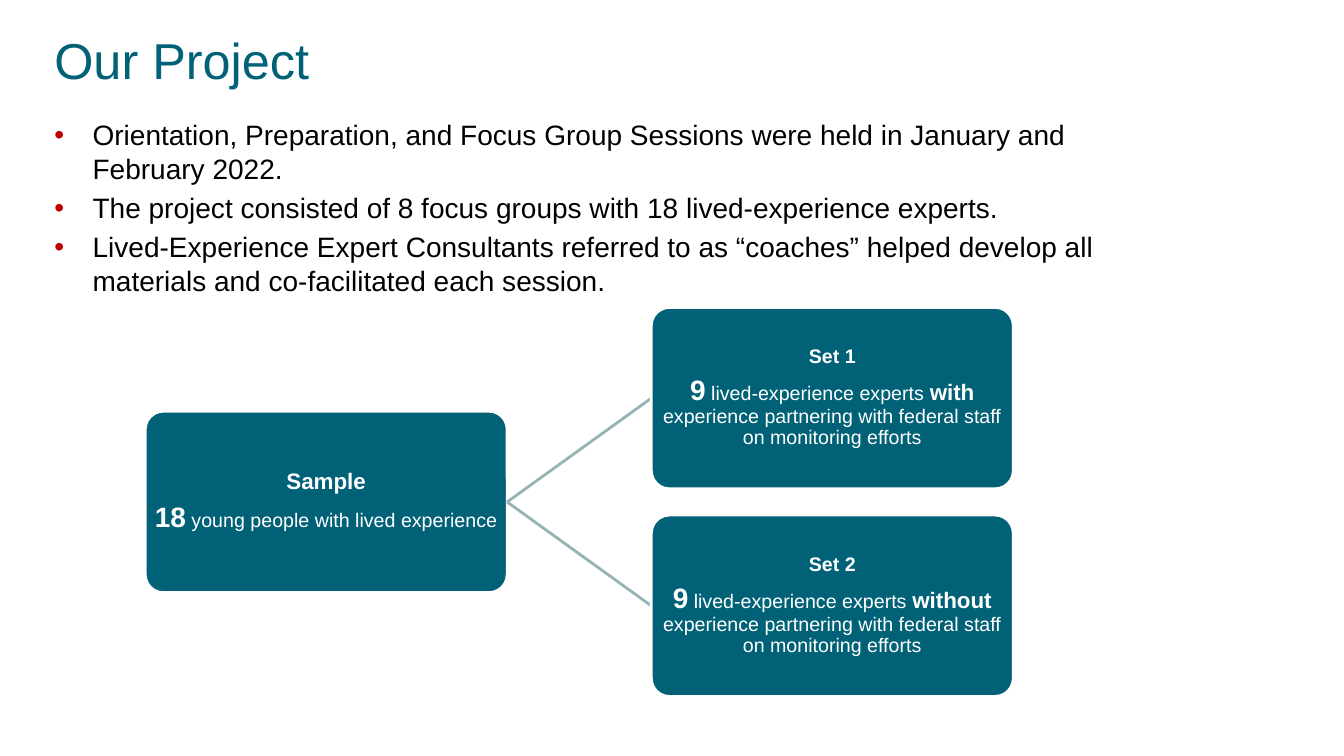
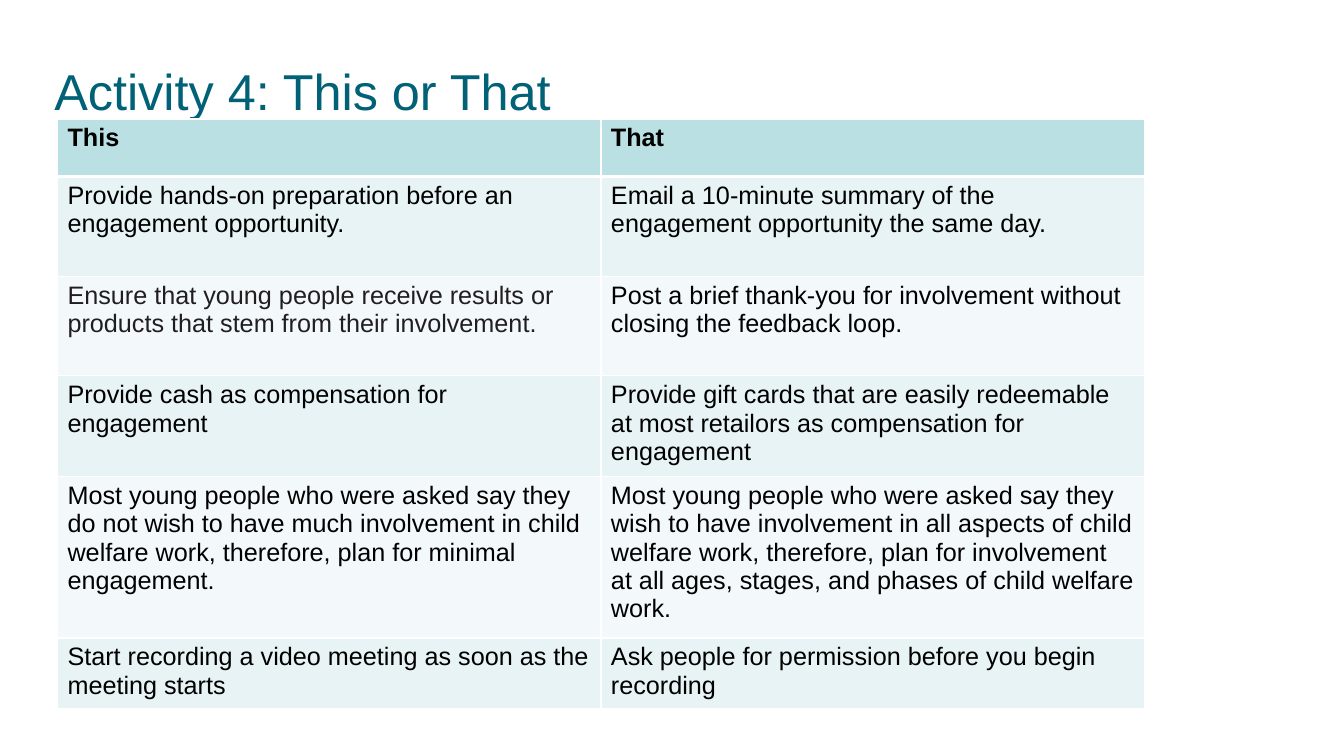
from dataclasses import dataclass

from lxml.etree import SubElement
from pptx import Presentation
from pptx.dml.color import RGBColor
from pptx.enum.shapes import MSO_CONNECTOR, MSO_SHAPE
from pptx.enum.text import MSO_ANCHOR, PP_ALIGN
from pptx.oxml.ns import qn
from pptx.util import Inches, Pt


@dataclass(frozen=True)
class Theme:
    font: str = "Arial"
    teal: str = "006177"
    black: str = "000000"
    charcoal: str = "211E1F"
    white: str = "FFFFFF"
    bullet: str = "C00000"
    branch: str = "96B3B6"
    header: str = "BBE0E3"
    bands: tuple = ("E7F3F4", "F3F9FA")
    title_size: int = 36
    body_size: int = 20
    table_size: int = 18
    strong_size: int = 16
    small_size: int = 14


THEME = Theme()
LEFT, CONTENT_WIDTH = 0.44, 10.78

PROJECT_TITLE = "Our Project"
PROJECT_POINTS = [
    "Orientation, Preparation, and Focus Group Sessions were held in January and February 2022.",
    "The project consisted of 8 focus groups with 18 lived-experience experts.",
    "Lived-Experience Expert Consultants referred to as “coaches” helped develop all "
    "materials and co-facilitated each session.",
]

# Each run is (text, size, bold)
SAMPLE = [
    [("Sample", THEME.strong_size, True)],
    [("18", THEME.body_size, True),
     (" young people with lived experience", THEME.small_size, False)],
]


def set_text(name, partnering):
    return [
        [(name, THEME.small_size, True)],
        [("9", THEME.body_size, True),
         (" lived-experience experts ", THEME.small_size, False),
         (partnering, THEME.strong_size, True),
         (" experience partnering with federal staff on monitoring efforts",
          THEME.small_size, False)],
    ]


SETS = [set_text("Set 1", "with"), set_text("Set 2", "without")]
NODE_WIDTH, NODE_HEIGHT = 3.59, 1.8
SAMPLE_LEFT, SETS_LEFT = 1.44, 6.46
SETS_TOP, SETS_PITCH = 3.05, 2.06

ACTIVITY_TITLE = "Activity 4: This or That"
CHOICES = [
    ("This", "That"),
    ("Provide hands-on preparation before an engagement opportunity.",
     "Email a 10-minute summary of the engagement opportunity the same day."),
    ("Ensure that young people receive results or products that stem from their involvement.",
     "Post a brief thank-you for involvement without closing the feedback loop."),
    ("Provide cash as compensation for engagement",
     "Provide gift cards that are easily redeemable at most retailors as compensation "
     "for engagement"),
    ("Most young people who were asked say they do not wish to have much involvement in "
     "child welfare work, therefore, plan for minimal engagement.",
     "Most young people who were asked say they wish to have involvement in all aspects of "
     "child welfare work, therefore, plan for involvement at all ages, stages, and phases "
     "of child welfare work."),
    ("Start recording a video meeting as soon as the meeting starts",
     "Ask people for permission before you begin recording"),
]
ROW_HEIGHTS = [0.57, 0.99, 0.99, 0.94, 1.5, 0.67]
CHARCOAL_CELL = (2, 0)
TABLE_LEFT, TABLE_TOP = 0.57, 1.18


def rgb(color):
    return RGBColor.from_string(color)


def style(run, size, color, bold=False):
    run.font.name = THEME.font
    run.font.size = Pt(size)
    run.font.bold = bold
    run.font.color.rgb = rgb(color)


def add_text_box(slide, left, top, width, height):
    box = slide.shapes.add_textbox(Inches(left), Inches(top), Inches(width), Inches(height))
    box.text_frame.word_wrap = True
    return box.text_frame


def add_title(slide, title, top, height):
    frame = add_text_box(slide, LEFT, top, CONTENT_WIDTH, height)
    frame.vertical_anchor = MSO_ANCHOR.MIDDLE
    frame.text = title
    style(frame.paragraphs[0].runs[0], THEME.title_size, THEME.teal)


def add_bullet(paragraph):
    properties = paragraph._p.get_or_add_pPr()
    properties.set("marL", str(Inches(0.38)))
    properties.set("indent", str(-Inches(0.38)))
    SubElement(SubElement(properties, qn("a:buClr")), qn("a:srgbClr"), val=THEME.bullet)
    SubElement(properties, qn("a:buFont"), typeface=THEME.font)
    SubElement(properties, qn("a:buChar"), char="•")


def add_points(slide, points):
    frame = add_text_box(slide, LEFT, 1.12, CONTENT_WIDTH, 1.9)
    frame.text = "\n".join(points)
    for index, paragraph in enumerate(frame.paragraphs):
        add_bullet(paragraph)
        if index:
            paragraph.space_before = Pt(4)
        style(paragraph.runs[0], THEME.body_size, THEME.black)


def add_node(slide, left, top, paragraphs):
    node = slide.shapes.add_shape(
        MSO_SHAPE.ROUNDED_RECTANGLE,
        Inches(left), Inches(top), Inches(NODE_WIDTH), Inches(NODE_HEIGHT))
    node.adjustments[0] = 0.1
    node.shadow.inherit = False
    node.fill.solid()
    node.fill.fore_color.rgb = rgb(THEME.teal)
    node.line.color.rgb = rgb(THEME.white)
    node.line.width = Pt(2)
    frame = node.text_frame
    frame.word_wrap = True
    frame.vertical_anchor = MSO_ANCHOR.MIDDLE
    frame.margin_left = frame.margin_right = Inches(0.01)
    frame.margin_top = frame.margin_bottom = Inches(0.01)
    for index, runs in enumerate(paragraphs):
        paragraph = frame.add_paragraph() if index else frame.paragraphs[0]
        paragraph.alignment = PP_ALIGN.CENTER
        paragraph.line_spacing = 0.9
        paragraph.space_after = Pt(6)
        for text, size, bold in runs:
            run = paragraph.add_run()
            run.text = text
            style(run, size, THEME.white, bold)
    return node


def add_branch(slide, parent):
    """Add a line from the parent's right side; its far end is joined later."""
    branch = slide.shapes.add_connector(MSO_CONNECTOR.STRAIGHT, 0, 0, 0, 0)
    branch.begin_connect(parent, 3)
    branch.line.color.rgb = rgb(THEME.branch)
    branch.line.width = Pt(2)
    SubElement(branch._element.spPr, qn("a:effectLst"))
    return branch


def add_sample_tree(slide):
    sample_top = SETS_TOP + SETS_PITCH * (len(SETS) - 1) / 2
    sample = add_node(slide, SAMPLE_LEFT, sample_top, SAMPLE)
    for index, paragraphs in enumerate(SETS):
        branch = add_branch(slide, sample)
        node = add_node(slide, SETS_LEFT, SETS_TOP + index * SETS_PITCH, paragraphs)
        branch.end_connect(node, 1)


def set_borders(cell, top, bottom):
    properties = cell._tc.get_or_add_tcPr()
    for side, width in (("L", 1), ("R", 1), ("T", top), ("B", bottom)):
        line = SubElement(properties, qn(f"a:ln{side}"), w=str(Pt(width)))
        SubElement(SubElement(line, qn("a:solidFill")), qn("a:srgbClr"), val=THEME.white)


def add_choices(slide):
    columns = len(CHOICES[0])
    table = slide.shapes.add_table(
        len(CHOICES), columns, Inches(TABLE_LEFT), Inches(TABLE_TOP),
        Inches(CONTENT_WIDTH), Inches(sum(ROW_HEIGHTS))).table
    for column in table.columns:
        column.width = Inches(CONTENT_WIDTH / columns)
    for row, (height, choices) in enumerate(zip(ROW_HEIGHTS, CHOICES)):
        table.rows[row].height = Inches(height)
        is_header = row == 0
        for column, choice in enumerate(choices):
            cell = table.cell(row, column)
            set_borders(cell, top=3 if row == 1 else 1, bottom=3 if is_header else 1)
            cell.fill.solid()
            cell.fill.fore_color.rgb = rgb(
                THEME.header if is_header else THEME.bands[(row - 1) % 2])
            cell.text_frame.text = choice
            color = THEME.charcoal if (row, column) == CHARCOAL_CELL else THEME.black
            style(cell.text_frame.paragraphs[0].runs[0], THEME.table_size, color, is_header)


def main():
    deck = Presentation()
    deck.slide_width, deck.slide_height = Inches(13.33), Inches(7.5)
    blank = deck.slide_layouts[6]

    project = deck.slides.add_slide(blank)
    add_title(project, PROJECT_TITLE, 0.13, 0.92)
    add_points(project, PROJECT_POINTS)
    add_sample_tree(project)

    activity = deck.slides.add_slide(blank)
    add_title(activity, ACTIVITY_TITLE, 0.3, 1.2)
    add_choices(activity)

    deck.save("out.pptx")


if __name__ == "__main__":
    main()
